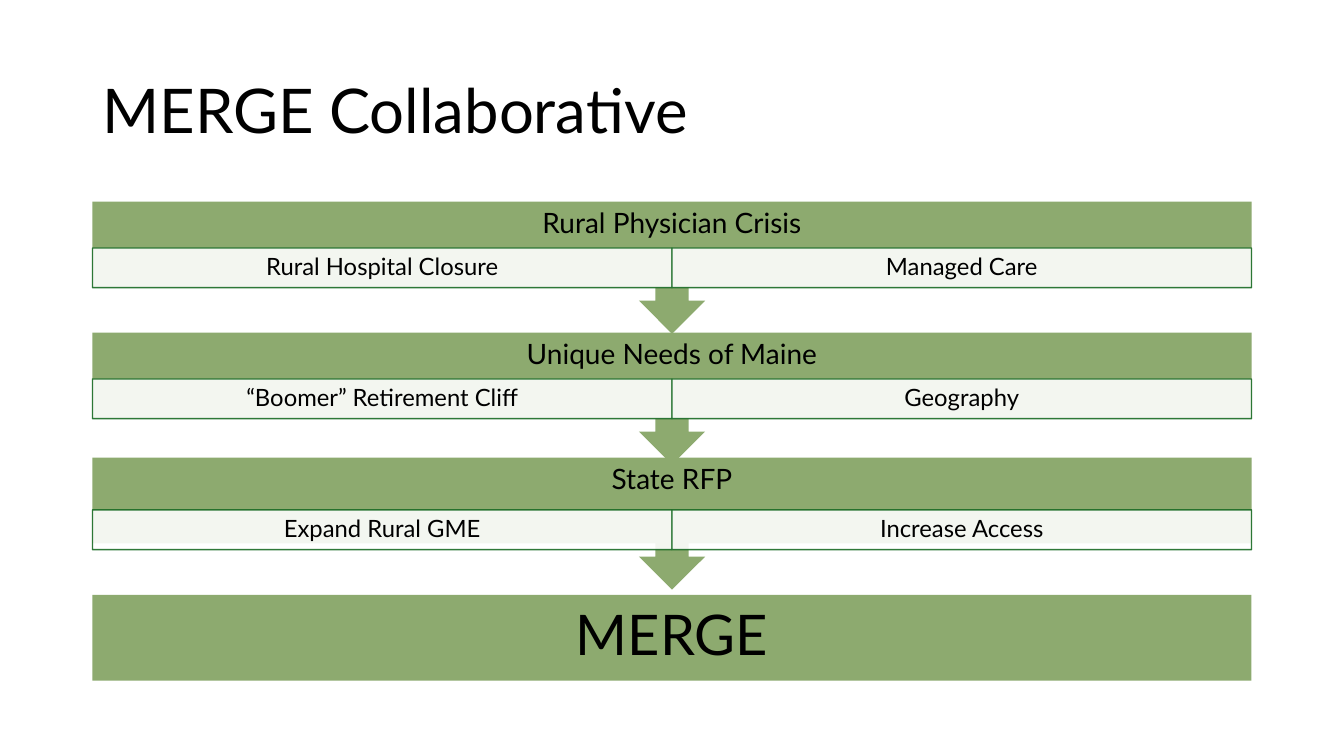
from pptx import Presentation
from pptx.dml.color import RGBColor
from pptx.enum.shapes import MSO_SHAPE as Shape
from pptx.enum.text import MSO_ANCHOR as Anchor, PP_ALIGN as Align
from pptx.oxml.ns import qn
from pptx.util import Cm, Pt
from lxml.etree import SubElement

BLACK = RGBColor(0x00, 0x00, 0x00)
WHITE = RGBColor(0xFF, 0xFF, 0xFF)
SAGE = RGBColor(0x8D, 0xAA, 0x6F)
FOREST = RGBColor(0x19, 0x6B, 0x24)

LEFT = 2.33
WIDTH = 29.21
HALF = WIDTH / 2
STAGE_HEIGHT = 3.33
FIRST_FACTOR_TOP = 6.25
FACTOR_STEP = 3.3

STAGES = [
    (5.08, "Rural Physician Crisis", ["Rural Hospital Closure", "Managed Care"]),
    (8.38, "Unique Needs of Maine", ["“Boomer” Retirement Cliff", "Geography"]),
    (11.53, "State RFP", ["Expand Rural GME", "Increase Access"]),
]

deck = Presentation()
deck.slide_width, deck.slide_height = Cm(33.87), Cm(19.05)
slide = deck.slides.add_slide(deck.slide_layouts[6])


def write(holder, text, size, align=Align.CENTER, inset=0.05):
    frame = holder.text_frame
    frame.word_wrap = True
    frame.vertical_anchor = Anchor.MIDDLE
    frame.margin_left = frame.margin_right = Cm(0.25)
    frame.margin_top = frame.margin_bottom = Cm(inset)
    line = frame.paragraphs[0]
    line.alignment = align
    line.line_spacing = 0.9
    run = line.add_run()
    run.text = text
    run.font.size = Pt(size)
    run.font.name = "Lato"
    run.font.color.rgb = BLACK


def add_block(preset, left, top, width, height, fill):
    block = slide.shapes.add_shape(preset, Cm(left), Cm(top), Cm(width), Cm(height))
    block.shadow.inherit = False
    block.fill.solid()
    block.fill.fore_color.rgb = fill
    block.line.fill.background()
    return block


title = slide.shapes.add_textbox(Cm(LEFT), Cm(1.01), Cm(WIDTH), Cm(3.68))
write(title, "MERGE Collaborative", 44, align=Align.LEFT, inset=0.13)

outcome = add_block(Shape.RECTANGLE, LEFT, 14.99, WIDTH, 2.16, SAGE)
write(outcome, "MERGE", 40)

for index, (top, heading, factors) in reversed(list(enumerate(STAGES))):
    stage = add_block(Shape.UP_ARROW_CALLOUT, LEFT, top, WIDTH, STAGE_HEIGHT, SAGE)
    stage.rotation = 180
    label = slide.shapes.add_textbox(Cm(LEFT), Cm(top), Cm(WIDTH), Cm(1.17))
    write(label, heading, 20)

    factor_top = FIRST_FACTOR_TOP + index * FACTOR_STEP
    for side, factor in enumerate(factors):
        cell = add_block(Shape.RECTANGLE, LEFT + side * HALF, factor_top, HALF, 1, WHITE)
        cell.line.color.rgb = FOREST
        cell.line.width = Pt(1)
        for colour in cell._element.spPr.iter(qn("a:srgbClr")):
            SubElement(colour, qn("a:alpha"), val="90000")
        write(cell, factor, 17)

deck.save("out.pptx")
